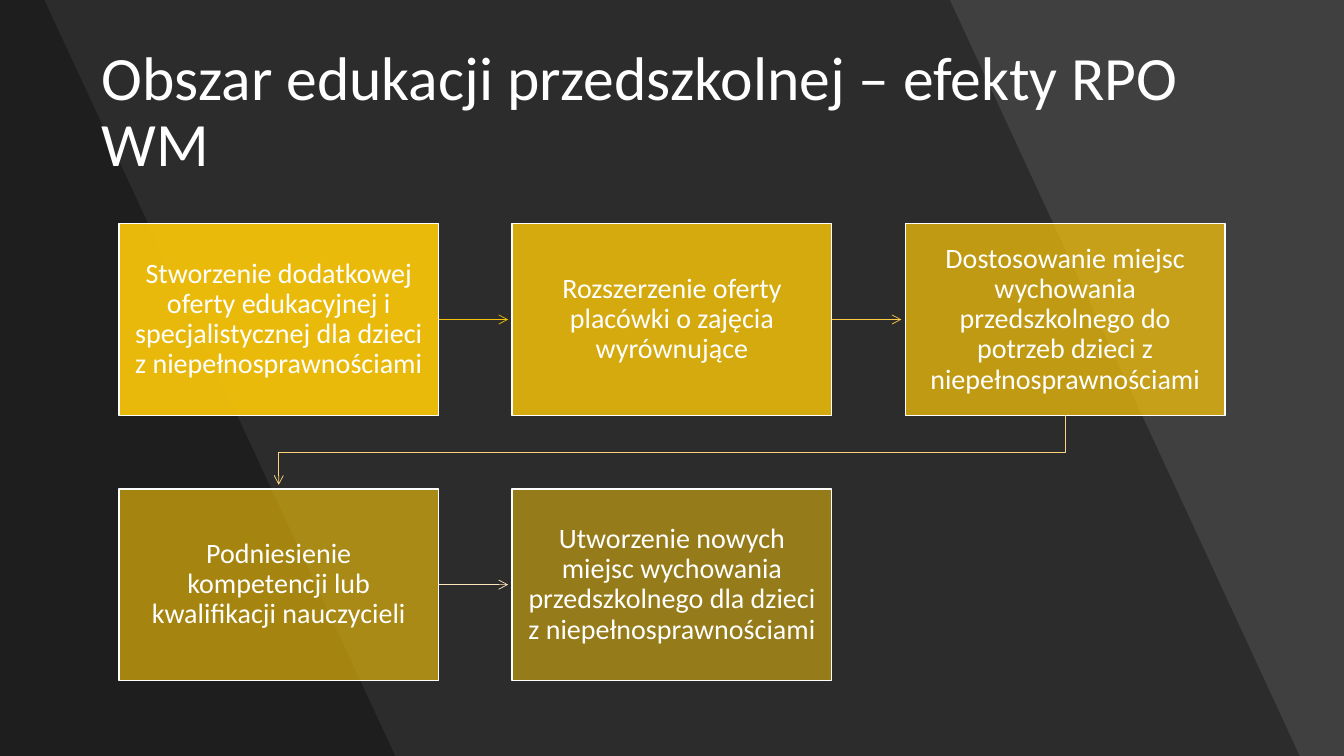
import pptx
import pptx.util
import pptx.dml.color
import pptx.enum.shapes
import pptx.enum.text
import pptx.oxml
import pptx.oxml.ns
import lxml.etree

Inches = pptx.util.Inches
Pt = pptx.util.Pt
RGBColor = pptx.dml.color.RGBColor
qn = pptx.oxml.ns.qn
ALIGN = pptx.enum.text.PP_ALIGN

WHITE = RGBColor(0xFF, 0xFF, 0xFF)
BLACK = RGBColor(0, 0, 0)
GREY = RGBColor(0x40, 0x40, 0x40)
GOLD = RGBColor(0xFF, 0xCA, 0x08)
ARROW_COLORS = [
    RGBColor(0xF4, 0xC1, 0x08),
    RGBColor(0xFB, 0xCA, 0x40),
    RGBColor(0xFE, 0xD5, 0x7E),
    RGBColor(0xFF, 0xE7, 0xBC),
]

STEPS = [
    "Stworzenie dodatkowej oferty edukacyjnej i specjalistycznej dla dzieci z niepełnosprawnościami",
    "Rozszerzenie oferty placówki o zajęcia wyrównujące",
    "Dostosowanie miejsc wychowania przedszkolnego do potrzeb dzieci z niepełnosprawnościami",
    "Podniesienie kompetencji lub kwalifikacji nauczycieli",
    "Utworzenie nowych miejsc wychowania przedszkolnego dla dzieci z niepełnosprawnościami",
]
COLUMNS = 3
LEFT, TOP = 1.18, 2.22
WIDTH, HEIGHT = 3.17, 1.9
STEP_X, STEP_Y = 3.9, 2.63
ARROW_LENGTH = 0.69


def write_text(shape, text, size, align, inset_x, inset_y):
    frame = shape.text_frame
    frame.word_wrap = True
    frame.auto_size = pptx.enum.text.MSO_AUTO_SIZE.NONE
    frame.vertical_anchor = pptx.enum.text.MSO_ANCHOR.MIDDLE
    frame.margin_left = frame.margin_right = Inches(inset_x)
    frame.margin_top = frame.margin_bottom = Inches(inset_y)
    para = frame.paragraphs[0]
    para.alignment = align
    para.line_spacing = 0.9
    span = para.add_run()
    span.text = text
    span.font.name = "Calibri"
    span.font.size = Pt(size)
    span.font.color.rgb = WHITE


def fill_color(shape, color, opacity):
    shape.shadow.inherit = False
    shape.fill.solid()
    shape.fill.fore_color.rgb = color
    tint = shape.fill._xPr.find(qn("a:solidFill"))[0]
    lxml.etree.SubElement(tint, qn("a:alpha"), val=str(opacity * 1000))


deck = pptx.Presentation()
deck.slide_width = Inches(13.33)
deck.slide_height = Inches(7.5)
page = deck.slides.add_slide(deck.slide_layouts[5])
page.background.fill.solid()
page.background.fill.fore_color.rgb = GREY

for top_edge, bottom_edge in [(9.42, 12.89), (0.44, 3.92)]:
    builder = page.shapes.build_freeform(0, 0, scale=1.0)
    corners = [(top_edge, 0), (bottom_edge, 7.5), (0, 7.5)]
    builder.add_line_segments([(Inches(x), Inches(y)) for x, y in corners], close=True)
    shade = builder.convert_to_shape()
    fill_color(shade, BLACK, 30)
    shade.line.fill.background()

title = page.shapes.title
shade._element.addnext(title._element)
title.left, title.top = Inches(0.91), Inches(0.4)
title.width, title.height = Inches(11.51), Inches(1.45)
write_text(title, "Obszar edukacji przedszkolnej – efekty RPO WM",
           size=44, align=ALIGN.LEFT, inset_x=0.1, inset_y=0.05)

boxes = []
for index, text in enumerate(STEPS):
    row, column = divmod(index, COLUMNS)
    box = page.shapes.add_shape(
        pptx.enum.shapes.MSO_SHAPE.RECTANGLE,
        Inches(LEFT + column * STEP_X), Inches(TOP + row * STEP_Y),
        Inches(WIDTH), Inches(HEIGHT))
    fill_color(box, GOLD, 90 - 10 * index)
    box.line.color.rgb = WHITE
    box.line.width = Pt(1)
    write_text(box, text, size=20, align=ALIGN.CENTER, inset_x=0.16, inset_y=0.16)
    boxes.append(box)

for index, color in enumerate(ARROW_COLORS):
    start, target = boxes[index], boxes[index + 1]
    if start.top == target.top:
        right = start.left + start.width
        middle = start.top + start.height // 2
        arrow = page.shapes.add_connector(
            pptx.enum.shapes.MSO_CONNECTOR.STRAIGHT,
            right, middle, right + Inches(ARROW_LENGTH), middle)
        arrow.begin_connect(start, 3)
    else:
        start_x = start.left + start.width // 2
        target_x = target.left + target.width // 2
        bottom = start.top + start.height
        bend = (bottom + target.top) // 2
        builder = page.shapes.build_freeform(start_x, bottom, scale=1.0)
        builder.add_line_segments(
            [(start_x, bend), (target_x, bend), (target_x, bottom + Inches(ARROW_LENGTH))],
            close=False)
        arrow = builder.convert_to_shape()
        arrow.fill.background()
    arrow.line.color.rgb = color
    arrow.line.width = Pt(0.5)
    outline = arrow.line._get_or_add_ln()
    lxml.etree.SubElement(outline, qn("a:tailEnd"), type="arrow")
    lxml.etree.SubElement(arrow._element.spPr, qn("a:effectLst"))

deck.save("out.pptx")
